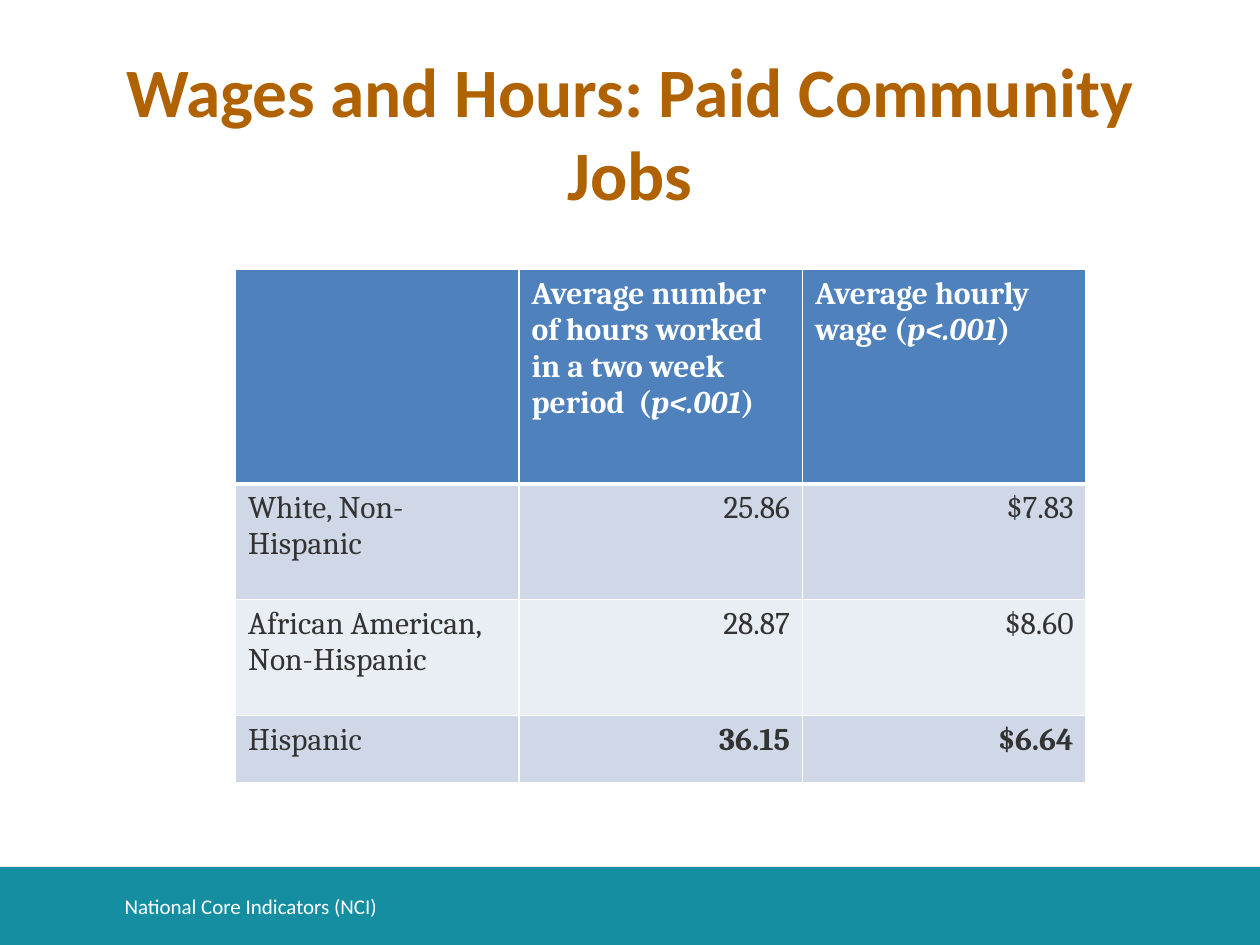
from dataclasses import dataclass

from lxml import etree
from pptx import Presentation
from pptx.dml.color import RGBColor
from pptx.enum.shapes import MSO_SHAPE
from pptx.enum.text import MSO_ANCHOR, MSO_AUTO_SIZE, PP_ALIGN
from pptx.oxml.ns import qn
from pptx.util import Inches, Pt

RECTANGLE = MSO_SHAPE.RECTANGLE
MIDDLE = MSO_ANCHOR.MIDDLE
NO_AUTOFIT = MSO_AUTO_SIZE.NONE
LEFT, CENTER, RIGHT = PP_ALIGN.LEFT, PP_ALIGN.CENTER, PP_ALIGN.RIGHT


@dataclass(frozen=True)
class Theme:
    title_color: str = "B06100"
    footer_fill: str = "168EA2"
    header_fill: str = "4F81BD"
    band_fills: tuple = ("D0D8E8", "E9EDF4")
    light: str = "FFFFFF"
    ink: str = "333333"
    heading_font: str = "Calibri"
    table_font: str = "Cambria"
    title_size: float = 39.6
    table_size: float = 18
    footer_size: float = 12


theme = Theme()


def style_run(run, font, size, color, bold=False, italic=False):
    run.font.name = font
    run.font.size = Pt(size)
    run.font.color.rgb = RGBColor.from_string(color)
    run.font.bold = bold
    run.font.italic = italic


def add_border(cell, side, width):
    line = etree.SubElement(cell._tc.get_or_add_tcPr(), qn(f"a:ln{side}"), w=str(Pt(width)))
    fill = etree.SubElement(line, qn("a:solidFill"))
    etree.SubElement(fill, qn("a:srgbClr"), val=theme.light)


prs = Presentation()
prs.slide_width, prs.slide_height = Inches(10), Inches(7.5)
slide = prs.slides.add_slide(prs.slide_layouts[5])

# Footer band
footer_band = slide.shapes.add_shape(RECTANGLE, 0, Inches(6.88), Inches(10), Inches(0.62))
footer_band.shadow.inherit = False
footer_band.fill.solid()
footer_band.fill.fore_color.rgb = RGBColor.from_string(theme.footer_fill)
footer_band.line.fill.background()

# Title
title = slide.shapes.title
title.left, title.top, title.width, title.height = (Inches(v) for v in (0.5, 0.3, 9, 1.48))
title.text_frame.text = "Wages and Hours: Paid Community Jobs"
title.text_frame.auto_size = NO_AUTOFIT
title.text_frame.vertical_anchor = MIDDLE
heading = title.text_frame.paragraphs[0]
heading.alignment = CENTER
style_run(heading.runs[0], theme.heading_font, theme.title_size, theme.title_color, bold=True)

# Wages and hours table: each cell is a list of text pieces
SIGNIFICANCE = "p<.001"
wage_rows = [
    [[],
     ["Average number of hours worked in a two week period  (", SIGNIFICANCE, ")"],
     ["Average hourly wage (", SIGNIFICANCE, ")"]],
    [["White, Non-Hispanic"], ["25.86"], ["$7.83"]],
    [["African American, Non-Hispanic"], ["28.87"], ["$8.60"]],
    [["Hispanic"], ["36.15"], ["$6.64"]],
]
row_heights = [1.7, 0.92, 0.92, 0.53]
last_row = len(wage_rows) - 1

wages = slide.shapes.add_table(len(wage_rows), 3, Inches(1.87), Inches(2.14),
                               Inches(6.75), Inches(sum(row_heights))).table
for column in wages.columns:
    column.width = Inches(2.25)

for r, row in enumerate(wage_rows):
    wages.rows[r].height = Inches(row_heights[r])
    is_header = r == 0
    for c, pieces in enumerate(row):
        cell = wages.cell(r, c)
        # A thicker rule separates the header from the body
        for side, width in (("L", 1), ("R", 1), ("T", 3 if r == 1 else 1),
                            ("B", 3 if is_header else 1)):
            add_border(cell, side, width)
        cell.fill.solid()
        fill = theme.header_fill if is_header else theme.band_fills[(r - 1) % 2]
        cell.fill.fore_color.rgb = RGBColor.from_string(fill)

        paragraph = cell.text_frame.paragraphs[0]
        paragraph.font.size = Pt(theme.table_size)
        paragraph.alignment = RIGHT if c and not is_header else LEFT
        for piece in pieces:
            run = paragraph.add_run()
            run.text = piece
            style_run(run, theme.table_font, theme.table_size,
                      theme.light if is_header else theme.ink,
                      bold=is_header or (r == last_row and c > 0),
                      italic=piece == SIGNIFICANCE)

# Footer text
footer = slide.shapes.add_textbox(Inches(0.89), Inches(6.99), Inches(7.4), Inches(0.4))
footer.text_frame.word_wrap = True
footer.text_frame.vertical_anchor = MIDDLE
footer.text_frame.text = "National Core Indicators (NCI)"
style_run(footer.text_frame.paragraphs[0].runs[0], theme.heading_font,
          theme.footer_size, theme.light)

prs.save("out.pptx")
